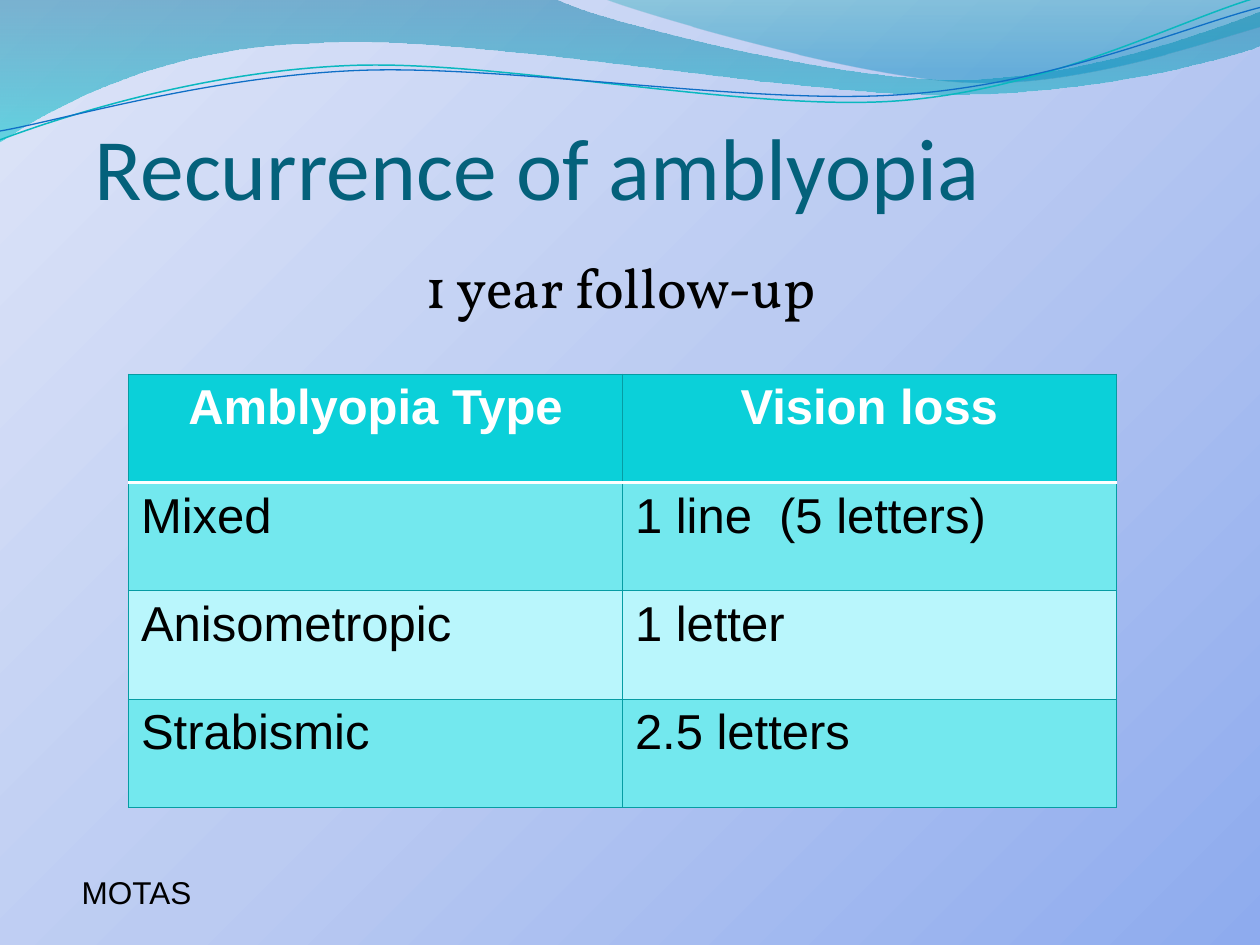
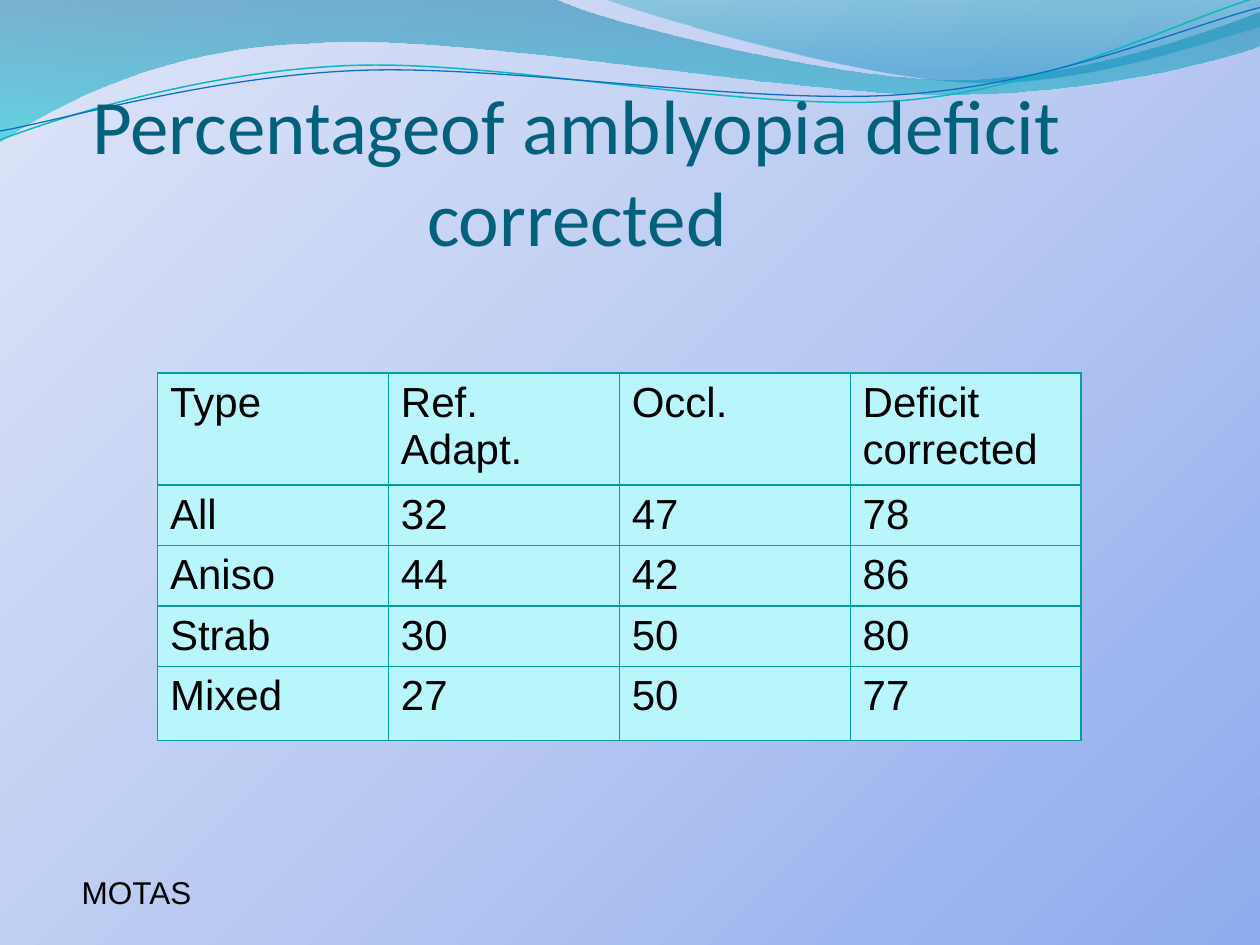
from math import cos, radians, sin
from lxml.etree import SubElement
from pptx import Presentation
from pptx.dml.color import RGBColor
from pptx.enum.text import MSO_ANCHOR, MSO_AUTO_SIZE, PP_ALIGN
from pptx.oxml.ns import qn
from pptx.util import Pt

PX = 9144
TILT = 2.7


class Theme:
    title = RGBColor.from_string("04617B")
    ink = RGBColor.from_string("000000")
    white = RGBColor.from_string("FFFFFF")
    head = RGBColor.from_string("0BD0D9")
    band = RGBColor.from_string("73E8EE")
    pale = RGBColor.from_string("B9F6FC")
    rule = RGBColor.from_string("069CA3")
    teal = RGBColor.from_string("0AB8BF")
    blue = RGBColor.from_string("0F6FC6")
    back = [(0, "8EABEE", 100), (50, "BBCBF2", 100), (100, "DEE5F8", 100)]
    wide = [(0, "0074A1", 45), (100, "00C6CF", 55)]
    short = [(0, "00A1A9", 30), (80, "008BBF", 45)]
    heading, sans, serif = "Calibri", "Arial", "Vollkorn"
    note, lead = Pt(18), Pt(32)


def blend(fill, root, stops, angle):
    fill.gradient()
    grad = root.find(".//" + qn("a:gradFill"))
    grad.find(qn("a:lin")).set("ang", str(angle * 60000))
    group = grad.find(qn("a:gsLst"))
    group.clear()
    for place, color, alpha in stops:
        stop = SubElement(group, qn("a:gs"), pos=str(place * 1000))
        tone = SubElement(stop, qn("a:srgbClr"), val=color)
        if alpha < 100:
            SubElement(tone, qn("a:alpha"), val=str(alpha * 1000))


def grid(slide, left, top, width, heights, rows, size, fills, header):
    frame = slide.shapes.add_table(
        len(rows), len(rows[0]), left * PX, top * PX, width * PX, sum(heights) * PX
    )
    table = frame.table
    table.first_row = header
    table.horz_banding = False
    for r, words in enumerate(rows):
        table.rows[r].height = heights[r] * PX
        for c, word in enumerate(words):
            cell = table.cell(r, c)
            cell.text = word
            cell.fill.solid()
            cell.fill.fore_color.rgb = fills[r]
            bold = header and r == 0
            para = cell.text_frame.paragraphs[0]
            para.alignment = PP_ALIGN.CENTER if bold else PP_ALIGN.LEFT
            para.font.name = Theme.sans
            para.font.size = size
            para.font.bold = bold
            para.font.color.rgb = Theme.white if bold else Theme.ink
            props = cell._tc.get_or_add_tcPr()
            for spot, side in enumerate(("lnL", "lnR", "lnT", "lnB")):
                thick = header and (r, side) in ((0, "lnB"), (1, "lnT"))
                line = SubElement(props, qn("a:" + side), w=str(Pt(2) if thick else Pt(0.75)))
                paint = SubElement(line, qn("a:solidFill"))
                SubElement(paint, qn("a:srgbClr"), val=str(Theme.white if thick else Theme.rule))
                props.insert(spot, line)


deck = Presentation()
deck.slide_width = 1000 * PX
deck.slide_height = 750 * PX
master = deck.slide_master
blend(master.background.fill, master.element, Theme.back, 225)

loss = deck.slides.add_slide(deck.slide_layouts[1])
share = deck.slides.add_slide(deck.slide_layouts[5])

waves = [
    ([(0, 0), (440, -1), (476, 17, 664, 63, 758, 63), (853, 63, 958, 26, 1000, 9),
      (1001, 36), (983, 44, 870, 76, 746, 75), (622, 75, 382, 28, 257, 34),
      (129, 36, 46, 83, -1, 113), (0, 0)], Theme.wide, None, None, None),
    ([(479, -1), (509, 11, 682, 62, 769, 65), (856, 69, 961, 32, 1000, 21),
      (1000, 0), (479, -1)], Theme.short, None, None, None),
    ([(0, 111), (48, 93, 158, 57, 277, 52), (395, 47, 593, 89, 713, 80),
      (833, 71, 938, 15, 998, -2)], None, Theme.teal, Pt(0.85), (499, 57)),
    ([(0, 104), (47, 96, 164, 61, 283, 56), (403, 51, 597, 84, 717, 75),
      (836, 67, 941, 21, 1000, 6)], None, Theme.blue, Pt(0.75), (500, 59)),
]
for spot, (parts, stops, color, weight, pivot) in enumerate(waves):
    dots = [dot for part in parts for dot in zip(part[::2], part[1::2])]
    if pivot:
        a, b = pivot
        turn, lift = cos(radians(TILT)), sin(radians(TILT))
        dots = [(a + (x - a) * turn - (y - b) * lift, b + (x - a) * lift + (y - b) * turn)
                for x, y in dots]
    dots = [(x * PX, y * PX) for x, y in dots]
    draft = loss.shapes.build_freeform(*dots[0])
    draft.add_line_segments(dots[1:], close=stops is not None)
    wave = draft.convert_to_shape()
    wave.shadow.inherit = False
    if stops:
        blend(wave.fill, wave.element, stops, 90)
        wave.line.fill.background()
    else:
        wave.fill.background()
        wave.line.color.rgb = color
        wave.line.width = weight
        wave.rotation = 360 - TILT
    legs = iter(wave.element.findall(".//" + qn("a:lnTo")))
    for part in parts[1:]:
        leg = next(legs)
        if len(part) == 6:
            leg.tag = qn("a:cubicBezTo")
            for extra in (next(legs), next(legs)):
                leg.append(extra[0])
                extra.getparent().remove(extra)
    wave.element.nvSpPr.cNvPr.set("id", str(20 + spot))
    master.shapes.element.insert(2 + spot, wave.element)

heads = [
    (loss, "Recurrence of amblyopia", (75, 23, 858, 150), Pt(50), PP_ALIGN.LEFT),
    (share, "Percentageof amblyopia deficit corrected", (8, 53, 900, 155), Pt(44), PP_ALIGN.CENTER),
]
for slide, words, box, size, align in heads:
    title = slide.shapes.title
    title.left, title.top, title.width, title.height = [n * PX for n in box]
    frame = title.text_frame
    frame.text = words
    frame.auto_size = MSO_AUTO_SIZE.NONE
    frame.vertical_anchor = MSO_ANCHOR.BOTTOM
    frame.margin_left = frame.margin_right = frame.margin_bottom = 0
    frame.margin_top = 5 * PX
    para = frame.paragraphs[0]
    para.alignment = align
    para.font.name = Theme.heading
    para.font.size = size
    para.font.color.rgb = Theme.title

body = loss.placeholders[1]
body.left, body.top, body.width, body.height = [n * PX for n in (47, 195, 900, 89)]
body.text_frame.text = "1 year follow-up "
body.text_frame.auto_size = MSO_AUTO_SIZE.NONE
para = body.text_frame.paragraphs[0]
para.alignment = PP_ALIGN.CENTER
para.space_before = Pt(6)
para.font.name = Theme.serif
para.font.size = Theme.lead
para.font.color.rgb = Theme.ink
props = para._p.get_or_add_pPr()
props.set("marL", str(30 * PX))
props.set("indent", str(-30 * PX))
props.insert(1, SubElement(props, qn("a:buNone")))

grid(loss, 102, 297, 784, [86] * 4, [
    ("Amblyopia Type", "Vision loss"),
    ("Mixed", "1 line  (5 letters)"),
    ("Anisometropic", "1 letter"),
    ("Strabismic", "2.5 letters"),
], Pt(28), [Theme.head, Theme.band, Theme.pale, Theme.band], True)

grid(share, 125, 296, 733, [89, 48, 48, 48, 59], [
    ("Type", "Ref.  Adapt.", "Occl.", "Deficit corrected"),
    ("All", "32", "47", "78"),
    ("Aniso", "44", "42", "86"),
    ("Strab", "30", "50", "80"),
    ("Mixed", "27", "50", "77"),
], Pt(24), [Theme.pale] * 5, False)

for slide in deck.slides:
    note = slide.shapes.add_textbox(55 * PX, 688 * PX, 108 * PX, 40 * PX)
    note.text_frame.text = "MOTAS"
    note.text_frame.word_wrap = False
    note.text_frame.auto_size = MSO_AUTO_SIZE.SHAPE_TO_FIT_TEXT
    para = note.text_frame.paragraphs[0]
    para.font.name = Theme.sans
    para.font.size = Theme.note
    para.font.color.rgb = Theme.ink

deck.save("out.pptx")
